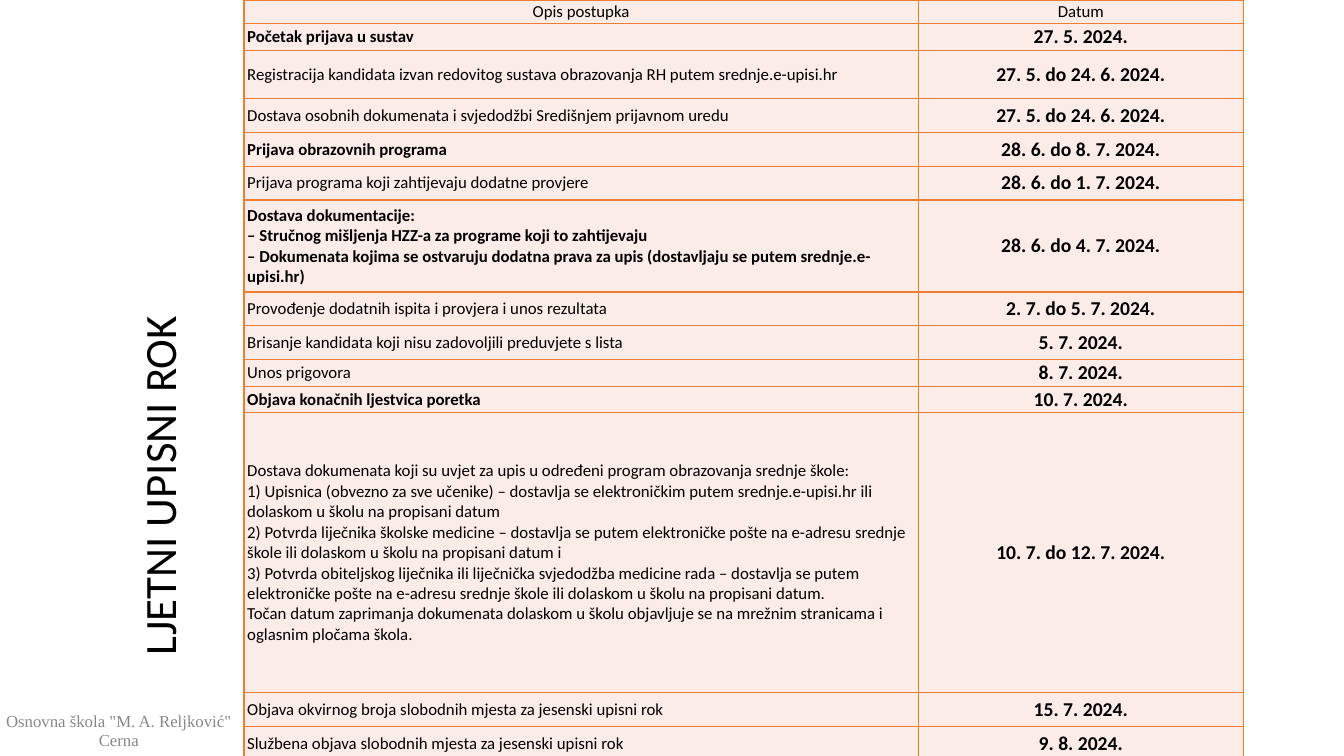
from lxml.etree import SubElement
from pptx import Presentation
from pptx.dml.color import RGBColor
from pptx.enum.text import MSO_ANCHOR, PP_ALIGN
from pptx.oxml.ns import qn
from pptx.util import Cm, Pt

TITLE = "LJETNI UPISNI ROK"
SCHOOL = 'Osnovna škola "M. A. Reljković" Cerna'
HEADER = ("Opis postupka", "Datum")
HEADER_HEIGHT = 0.6
STEPS = [
    (0.67, True, ["Početak prijava u sustav"], "27. 5. 2024."),
    (1.22, False, ["Registracija kandidata izvan redovitog sustava obrazovanja RH putem srednje.e-upisi.hr"],
     "27. 5. do 24. 6. 2024."),
    (0.85, False, ["Dostava osobnih dokumenata i svjedodžbi Središnjem prijavnom uredu"],
     "27. 5. do 24. 6. 2024."),
    (0.85, True, ["Prijava obrazovnih programa"], "28. 6. do 8. 7. 2024."),
    (0.85, False, ["Prijava programa koji zahtijevaju dodatne provjere"], "28. 6. do 1. 7. 2024."),
    (2.32, True, [
        "Dostava dokumentacije:",
        "– Stručnog mišljenja HZZ-a za programe koji to zahtijevaju",
        "– Dokumenata kojima se ostvaruju dodatna prava za upis (dostavljaju se putem srednje.e-upisi.hr)",
    ], "28. 6. do 4. 7. 2024."),
    (0.85, False, ["Provođenje dodatnih ispita i provjera i unos rezultata"], "2. 7. do 5. 7. 2024."),
    (0.85, False, ["Brisanje kandidata koji nisu zadovoljili preduvjete s lista"], "5. 7. 2024."),
    (0.67, False, ["Unos prigovora"], "8. 7. 2024."),
    (0.67, True, ["Objava konačnih ljestvica poretka"], "10. 7. 2024."),
    (7.06, False, [
        "Dostava dokumenata koji su uvjet za upis u određeni program obrazovanja srednje škole:",
        "1) Upisnica (obvezno za sve učenike) – dostavlja se elektroničkim putem srednje.e-upisi.hr "
        "ili dolaskom u školu na propisani datum",
        "2) Potvrda liječnika školske medicine – dostavlja se putem elektroničke pošte na e-adresu "
        "srednje škole ili dolaskom u školu na propisani datum i",
        "3) Potvrda obiteljskog liječnika ili liječnička svjedodžba medicine rada – dostavlja se putem "
        "elektroničke pošte na e-adresu srednje škole ili dolaskom u školu na propisani datum.",
        "Točan datum zaprimanja dokumenata dolaskom u školu objavljuje se na mrežnim stranicama "
        "i oglasnim pločama škola.",
    ], "10. 7. do 12. 7. 2024."),
    (0.85, False, ["Objava okvirnog broja slobodnih mjesta za jesenski upisni rok"], "15. 7. 2024."),
    (0.85, False, ["Službena objava slobodnih mjesta za jesenski upisni rok"], "9. 8. 2024."),
]
COLUMN_WIDTHS = (16.99, 8.2)
CELL_FILL = "FCECE8"
BORDER = "ED7D31"


def color(value):
    return RGBColor.from_string(value)


def write_text(frame, lines, size=12, bold=False, font="Calibri", ink="000000",
               align=PP_ALIGN.LEFT, spacing=None):
    frame.word_wrap = True
    for index, line in enumerate(lines):
        paragraph = frame.add_paragraph() if index else frame.paragraphs[0]
        paragraph.alignment = align
        if spacing:
            paragraph.line_spacing = Pt(spacing)
        run = paragraph.add_run()
        run.text = line
        run.font.size = Pt(size)
        run.font.bold = bold
        run.font.name = font
        run.font.color.rgb = color(ink)


def add_borders(cell):
    properties = cell._tc.get_or_add_tcPr()
    for index, side in enumerate(("a:lnL", "a:lnR", "a:lnT", "a:lnB")):
        line = SubElement(properties, qn(side), w=str(Pt(1)))
        fill = SubElement(line, qn("a:solidFill"))
        SubElement(fill, qn("a:srgbClr"), val=BORDER)
        properties.insert(index, line)


def fill_cell(cell, lines, **text_format):
    cell.margin_left = cell.margin_right = Cm(0.08)
    cell.margin_top = cell.margin_bottom = Cm(0.03)
    cell.vertical_anchor = MSO_ANCHOR.MIDDLE
    cell.fill.solid()
    cell.fill.fore_color.rgb = color(CELL_FILL)
    add_borders(cell)
    write_text(cell.text_frame, lines, **text_format)


def add_schedule(slide):
    heights = [HEADER_HEIGHT] + [step[0] for step in STEPS]
    frame = slide.shapes.add_table(len(heights), len(COLUMN_WIDTHS), Cm(6.15), Cm(0),
                                   Cm(sum(COLUMN_WIDTHS)), Cm(sum(heights)))
    table = frame.table
    table.horz_banding = False
    for column, width in zip(table.columns, COLUMN_WIDTHS):
        column.width = Cm(width)
    for row, height in zip(table.rows, heights):
        row.height = Cm(height)
    for index, label in enumerate(HEADER):
        fill_cell(table.cell(0, index), [label], align=PP_ALIGN.CENTER)
    for index, (_, bold, lines, date) in enumerate(STEPS, 1):
        fill_cell(table.cell(index, 0), lines, bold=bold)
        fill_cell(table.cell(index, 1), [date], size=14, bold=True, align=PP_ALIGN.CENTER)


def main():
    presentation = Presentation()
    presentation.slide_width = Cm(33.87)
    presentation.slide_height = Cm(19.05)
    slide = presentation.slides.add_slide(presentation.slide_layouts[6])

    footer = slide.shapes.add_textbox(Cm(0.05), Cm(17.91), Cm(5.89), Cm(1.02)).text_frame
    footer.margin_left = footer.margin_right = footer.margin_top = footer.margin_bottom = 0
    footer.vertical_anchor = MSO_ANCHOR.MIDDLE
    write_text(footer, [SCHOOL], font="Times New Roman", ink="888888",
               align=PP_ALIGN.CENTER, spacing=13.8)

    title = slide.shapes.add_textbox(Cm(-3), Cm(8.94), Cm(14), Cm(1.63))
    title.rotation = 270
    write_text(title.text_frame, [TITLE], size=32)

    add_schedule(slide)
    presentation.save("out.pptx")


if __name__ == "__main__":
    main()
